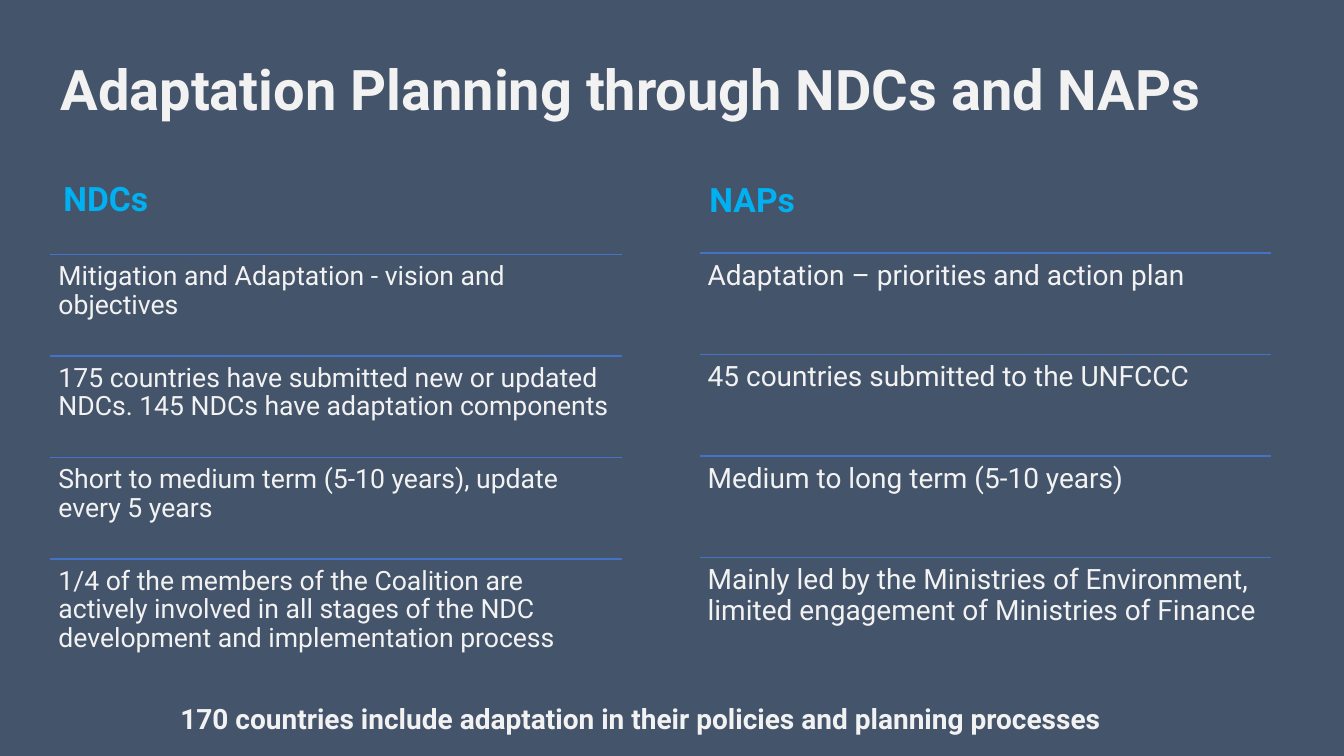
from pptx import Presentation
from pptx.util import Pt
from pptx.dml.color import RGBColor
from pptx.enum.shapes import MSO_CONNECTOR
from pptx.enum.text import MSO_ANCHOR
from pptx.oxml.ns import qn
from lxml.etree import SubElement

HUES = {"back": "44546A", "text": "F2F2F2", "head": "00B0F0", "rule": "4472C4"}

deck = Presentation()
deck.slide_width, deck.slide_height = Pt(960), Pt(540)
slide = deck.slides.add_slide(deck.slide_layouts[6])
slide.background.fill.solid()
slide.background.fill.fore_color.rgb = RGBColor.from_string(HUES["back"])


def write(text, left, top, width, height, size, hue="text", bold=False,
          anchor=MSO_ANCHOR.TOP, pad=(7.2, 3.6), space=0.9):
    box = slide.shapes.add_textbox(Pt(left), Pt(top), Pt(width), Pt(height))
    frame = box.text_frame
    frame.word_wrap = True
    frame.vertical_anchor = anchor
    frame.margin_left = frame.margin_right = Pt(pad[0])
    frame.margin_top = frame.margin_bottom = Pt(pad[1])
    frame.text = text
    para = frame.paragraphs[0]
    para.line_spacing = space
    font = para.runs[0].font
    font.name, font.size, font.bold = "Roboto", Pt(size), bold
    font.color.rgb = RGBColor.from_string(HUES[hue])


write("Adaptation Planning through NDCs and NAPs", 36, 13.7, 899.3, 104.4, 40,
      bold=True, anchor=MSO_ANCHOR.MIDDLE)

WIDTH = 408.2
STEP = 72.5
PAD = 5.8
sides = [
    ("NDCs", 38.2, 115.2, 44.6, 36, 181.9, 19, [
        "Mitigation and Adaptation - vision and objectives",
        "175 countries have submitted new or updated NDCs. 145 NDCs have adaptation components",
        "Short to medium term (5-10 years), update every 5 years",
        "1/4 of the members of the Coalition are actively involved in all stages of the NDC "
        "development and implementation process",
    ]),
    ("NAPs", 499.7, 118.1, 42.5, 499.7, 180.7, 20, [
        "Adaptation – priorities and action plan",
        "45 countries submitted to the UNFCCC",
        "Medium to long term (5-10 years)",
        "Mainly led by the Ministries of Environment, limited engagement of Ministries of Finance",
    ]),
]
for head, edge, rise, tall, left, start, size, items in sides:
    write(head, edge, rise, WIDTH, tall, 24, "head", True, MSO_ANCHOR.BOTTOM)
    for row, item in enumerate(items):
        top = start + row * STEP
        rule = slide.shapes.add_connector(
            MSO_CONNECTOR.STRAIGHT, Pt(left), Pt(top), Pt(left + WIDTH), Pt(top))
        rule.line.color.rgb = RGBColor.from_string(HUES["rule"])
        rule.line.width = Pt(1)
        SubElement(rule.element.spPr, qn("a:effectLst"))
        write(item, left, top, WIDTH, STEP, size, pad=(PAD, PAD))

write("170 countries include adaptation in their policies and planning processes",
      121.7, 497.5, 899.3, 31.7, 20, bold=True, space=1.0)

deck.save("out.pptx")
